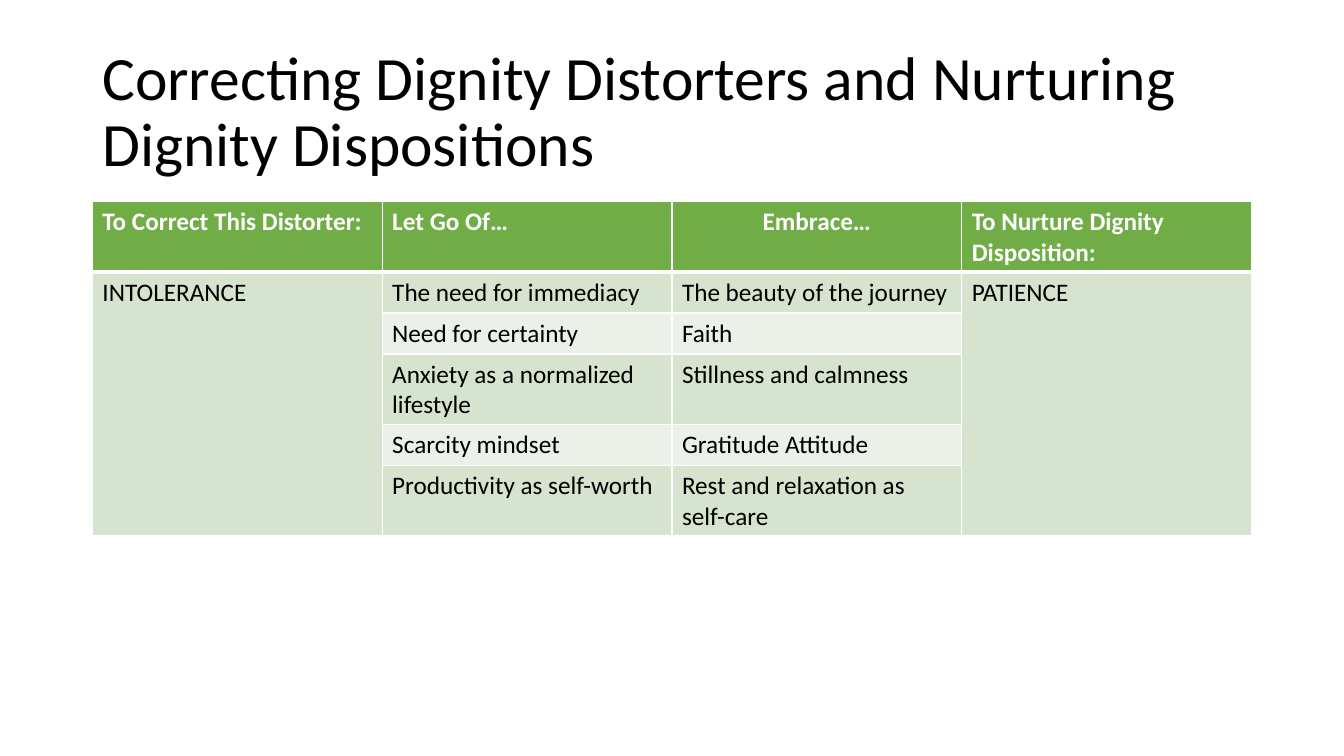
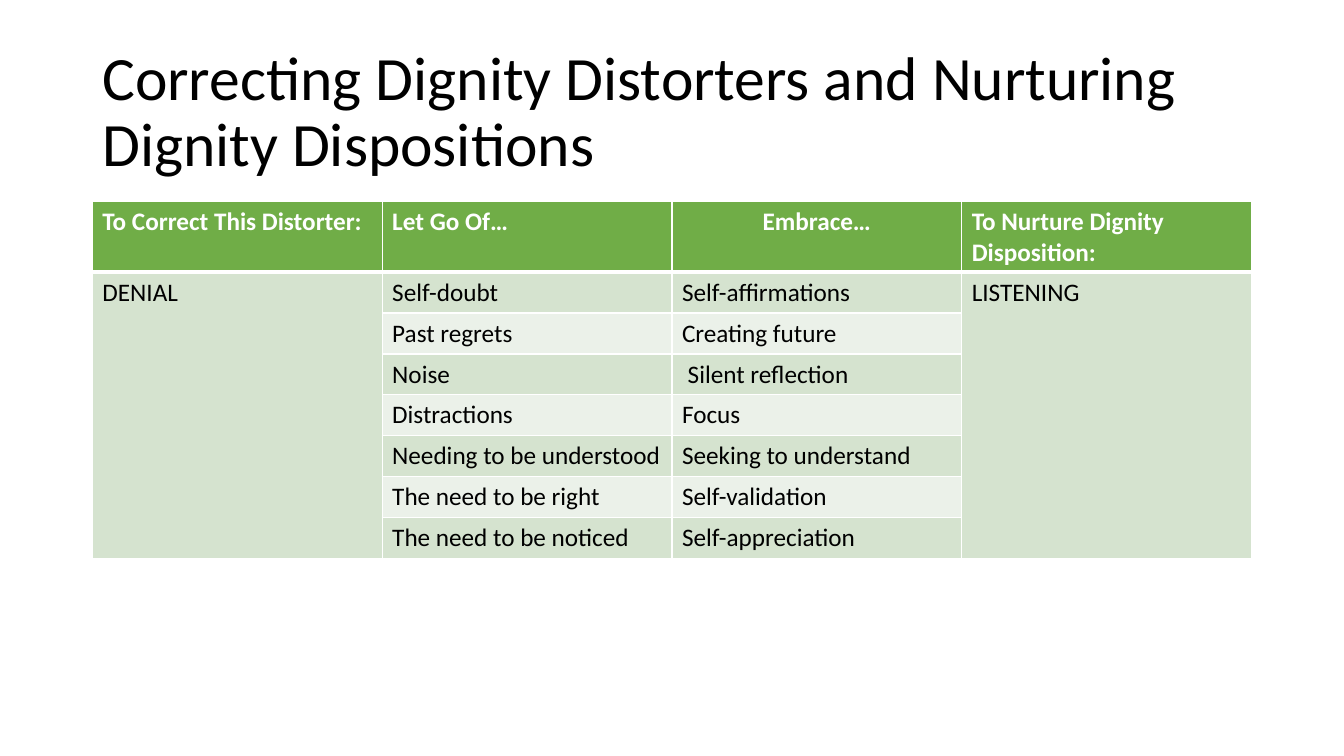
from dataclasses import dataclass

from lxml.etree import SubElement
from pptx import Presentation
from pptx.dml.color import RGBColor
from pptx.enum.text import MSO_ANCHOR, PP_ALIGN
from pptx.oxml.ns import qn
from pptx.util import Pt


@dataclass(frozen=True)
class Theme:
    """Colours, font and type sizes shared by the slides."""

    font: str = "Calibri"
    black: str = "000000"
    white: str = "FFFFFF"
    green: str = "70AD47"
    bands: tuple = ("D5E3CF", "EBF1E9")
    title_size: int = 44
    table_size: int = 18
    thin: int = 1
    thick: int = 3


THEME = Theme()
LEFT, WIDTH = 66, 828
TITLE_TOP, TITLE_HEIGHT = 28.75, 104.4
TABLE_TOP, HEADER_HEIGHT, ROW_HEIGHT = 144, 50.4, 29.2
TITLE = "Correcting Dignity Distorters and Nurturing Dignity Dispositions"
HEADINGS = ("To Correct This Distorter:", "Let Go Of…", "Embrace…", "To Nurture Dignity Disposition:")
CENTRED_HEADING = "Embrace…"
CONTENT = (
    ("INTOLERANCE", "PATIENCE", (
        ("The need for immediacy", "The beauty of the journey"),
        ("Need for certainty", "Faith"),
        ("Anxiety as a normalized lifestyle", "Stillness and calmness"),
        ("Scarcity mindset", "Gratitude Attitude"),
        ("Productivity as self-worth", "Rest and relaxation as self-care"),
    )),
    ("DENIAL", "LISTENING", (
        ("Self-doubt", "Self-affirmations"),
        ("Past regrets", "Creating future"),
        ("Noise", " Silent reflection"),
        ("Distractions", "Focus"),
        ("Needing to be understood", "Seeking to understand"),
        ("The need to be right", "Self-validation"),
        ("The need to be noticed", "Self-appreciation"),
    )),
)


def style_font(font, size, colour, bold=False):
    """Apply the theme font with a size, colour and weight."""
    font.name = THEME.font
    font.size = Pt(size)
    font.bold = bold
    font.color.rgb = RGBColor.from_string(colour)


def add_title(page, text):
    """Add the slide title."""
    box = page.shapes.add_textbox(Pt(LEFT), Pt(TITLE_TOP), Pt(WIDTH), Pt(TITLE_HEIGHT))
    frame = box.text_frame
    frame.word_wrap = True
    frame.vertical_anchor = MSO_ANCHOR.MIDDLE
    para = frame.paragraphs[0]
    para.text = text
    para.line_spacing = 0.9
    style_font(para.font, THEME.title_size, THEME.black)


def add_borders(cell, top, bottom):
    """Draw white cell borders with the given top and bottom widths."""
    properties = cell._tc.get_or_add_tcPr()
    widths = {"L": THEME.thin, "R": THEME.thin, "T": top, "B": bottom}
    for side, width in widths.items():
        line = SubElement(properties, qn(f"a:ln{side}"), w=str(Pt(width)))
        fill = SubElement(line, qn("a:solidFill"))
        SubElement(fill, qn("a:srgbClr"), val=THEME.white)


def format_cell(cell, row):
    """Style a cell according to its row."""
    header = row == 0
    add_borders(
        cell,
        top=THEME.thick if row == 1 else THEME.thin,
        bottom=THEME.thick if header else THEME.thin,
    )
    colour = THEME.green if header else THEME.bands[(row - 1) % 2]
    cell.fill.solid()
    cell.fill.fore_color.rgb = RGBColor.from_string(colour)
    para = cell.text_frame.paragraphs[0]
    style_font(para.font, THEME.table_size, THEME.white if header else THEME.black, header)
    if cell.text == CENTRED_HEADING:
        para.alignment = PP_ALIGN.CENTER


def add_practice_table(page, distorter, disposition, pairs):
    """Add a table whose outer columns each span all body rows."""
    height = HEADER_HEIGHT + ROW_HEIGHT * len(pairs)
    rows = [HEADINGS]
    rows += [("", let_go, embrace, "") for let_go, embrace in pairs]
    rows[1] = (distorter, *pairs[0], disposition)
    table = page.shapes.add_table(
        len(rows), len(HEADINGS), Pt(LEFT), Pt(TABLE_TOP), Pt(WIDTH), Pt(height)
    ).table
    table.horz_banding = False
    for index, texts in enumerate(rows):
        table.rows[index].height = Pt(ROW_HEIGHT if index else HEADER_HEIGHT)
        for column, text in enumerate(texts):
            cell = table.cell(index, column)
            cell.text = text
            format_cell(cell, index)
    for column in (0, len(HEADINGS) - 1):
        table.cell(1, column).merge(table.cell(len(pairs), column))


def main():
    """Build and save the deck."""
    deck = Presentation()
    deck.slide_width, deck.slide_height = Pt(960), Pt(540)
    for distorter, disposition, pairs in CONTENT:
        page = deck.slides.add_slide(deck.slide_layouts[6])
        add_title(page, TITLE)
        add_practice_table(page, distorter, disposition, pairs)
    deck.save("out.pptx")


if __name__ == "__main__":
    main()
